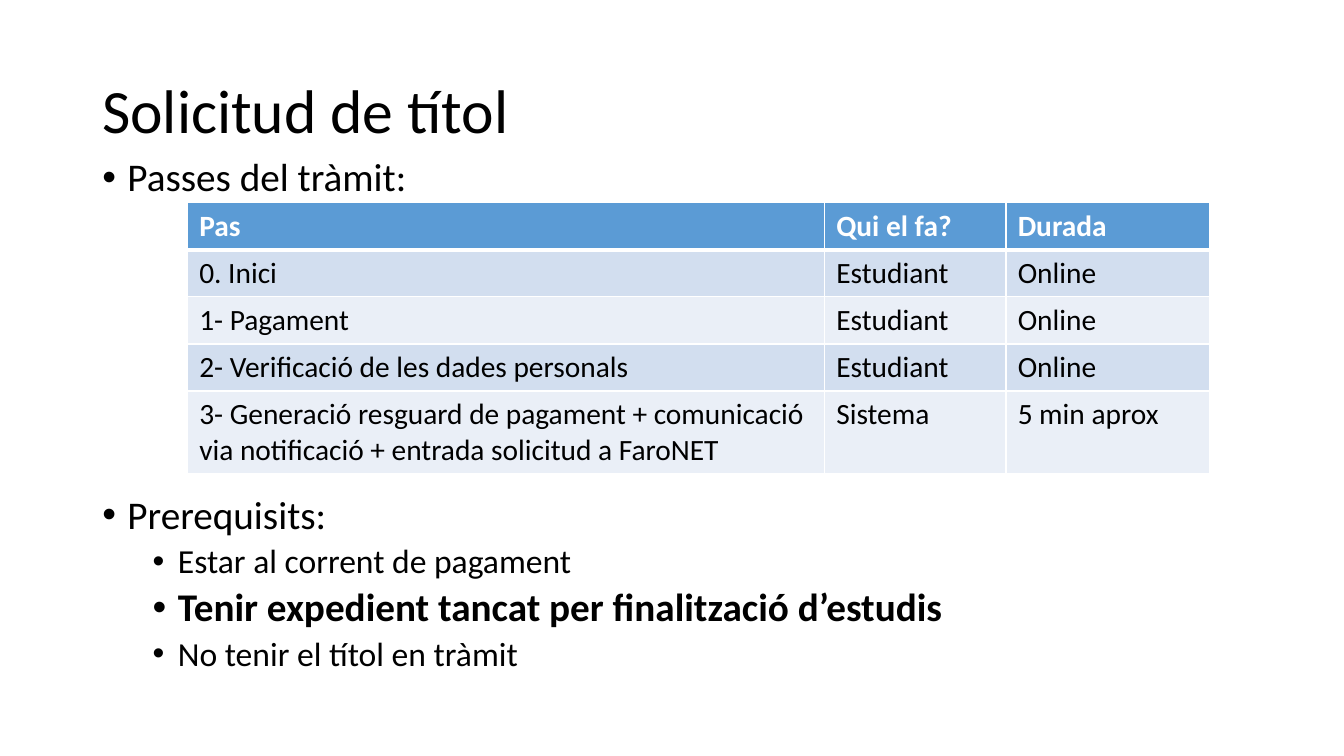
from lxml.etree import SubElement
from pptx import Presentation
from pptx.dml.color import RGBColor
from pptx.enum.text import MSO_ANCHOR
from pptx.oxml.ns import qn
from pptx.util import Pt

COLORS = {
    "text": "000000",
    "header_text": "FFFFFF",
    "border": "FFFFFF",
    "header": "5B9BD5",
    "odd_row": "D2DEEF",
    "even_row": "EAEFF7",
}

STEPS = [
    ("Pas", "Qui el fa?", "Durada"),
    ("0. Inici", "Estudiant", "Online"),
    ("1- Pagament", "Estudiant", "Online"),
    ("2- Verificació de les dades personals", "Estudiant", "Online"),
    ("3- Generació resguard de pagament + comunicació via notificació "
     "+ entrada solicitud a FaroNET", "Sistema", "5 min aprox"),
]

# text, level, size, bold, space before
OUTLINE = [
    ("Passes del tràmit:", 0, 28, False, 10),
    ("Prerequisits:", 0, 28, False, 210.6),  # leaves room for the table
    ("Estar al corrent de pagament", 1, 24, False, 5),
    ("Tenir expedient tancat per finalització d’estudis", 1, 28, True, 5),
    ("No tenir el títol en tràmit", 1, 24, False, 5),
]


class SlideBuilder:
    font = "Calibri"
    line_spacing = 0.9
    indent = 18
    level_step = 36

    def __init__(self, slide):
        self.slide = slide

    def style(self, paragraph, size, color="text", bold=False):
        paragraph.font.name = self.font
        paragraph.font.size = Pt(size)
        paragraph.font.bold = bold
        paragraph.font.color.rgb = RGBColor.from_string(COLORS[color])

    def text_frame(self, left, top, width, height, anchor):
        box = self.slide.shapes.add_textbox(Pt(left), Pt(top), Pt(width), Pt(height))
        frame = box.text_frame
        frame.word_wrap = True
        frame.vertical_anchor = anchor
        return frame

    def title(self, text, *place):
        paragraph = self.text_frame(*place, MSO_ANCHOR.MIDDLE).paragraphs[0]
        paragraph.text = text
        paragraph.line_spacing = self.line_spacing
        self.style(paragraph, 44)

    def bullets(self, items, *place):
        frame = self.text_frame(*place, MSO_ANCHOR.TOP)
        for index, (text, level, size, bold, before) in enumerate(items):
            paragraph = frame.add_paragraph() if index else frame.paragraphs[0]
            paragraph.text = text
            paragraph.level = level
            paragraph.line_spacing = self.line_spacing
            paragraph.space_before = Pt(before)
            self.style(paragraph, size, bold=bold)
            self.add_bullet(paragraph, self.indent + level * self.level_step)

    def add_bullet(self, paragraph, margin):
        properties = paragraph._p.get_or_add_pPr()
        properties.set("marL", str(Pt(margin)))
        properties.set("indent", str(-Pt(self.indent)))
        bullet_font = SubElement(properties, qn("a:buFont"))
        bullet_font.set("typeface", "Arial")
        SubElement(properties, qn("a:buChar")).set("char", "•")
        # the schema wants the default run properties last
        properties.append(properties.find(qn("a:defRPr")))

    def table(self, rows, column_widths, left, top, row_height):
        table = self.slide.shapes.add_table(
            len(rows), len(column_widths), Pt(left), Pt(top),
            Pt(sum(column_widths)), Pt(row_height * len(rows))).table
        for column, width in zip(table.columns, column_widths):
            column.width = Pt(width)
        for row_index, row in enumerate(rows):
            for column_index, text in enumerate(row):
                self.cell(table.cell(row_index, column_index), text, row_index)

    def cell(self, cell, text, row_index):
        is_header = row_index == 0
        cell.margin_left = cell.margin_right = Pt(8.4)
        cell.margin_top = cell.margin_bottom = Pt(4.2)
        self.borders(cell, top=3 if row_index == 1 else 1,
                     bottom=3 if is_header else 1)
        band = "odd_row" if row_index % 2 else "even_row"
        cell.fill.solid()
        cell.fill.fore_color.rgb = RGBColor.from_string(
            COLORS["header" if is_header else band])
        paragraph = cell.text_frame.paragraphs[0]
        paragraph.text = text
        self.style(paragraph, 21, "header_text" if is_header else "text", is_header)

    def borders(self, cell, top, bottom):
        properties = cell._tc.get_or_add_tcPr()
        for side, width in (("L", 1), ("R", 1), ("T", top), ("B", bottom)):
            line = SubElement(properties, qn(f"a:ln{side}"))
            line.set("w", str(Pt(width)))
            fill = SubElement(line, qn("a:solidFill"))
            SubElement(fill, qn("a:srgbClr")).set("val", COLORS["border"])


def main():
    presentation = Presentation()
    presentation.slide_width = Pt(960)
    presentation.slide_height = Pt(540)
    builder = SlideBuilder(presentation.slides.add_slide(presentation.slide_layouts[6]))
    builder.title("Solicitud de títol", 66, 28.75, 828, 104.4)
    builder.bullets(OUTLINE, 66, 109.4, 828, 376.6)
    builder.table(STEPS, (455, 129.6, 145.4), 134, 144.8, 33)
    presentation.save("out.pptx")


if __name__ == "__main__":
    main()
